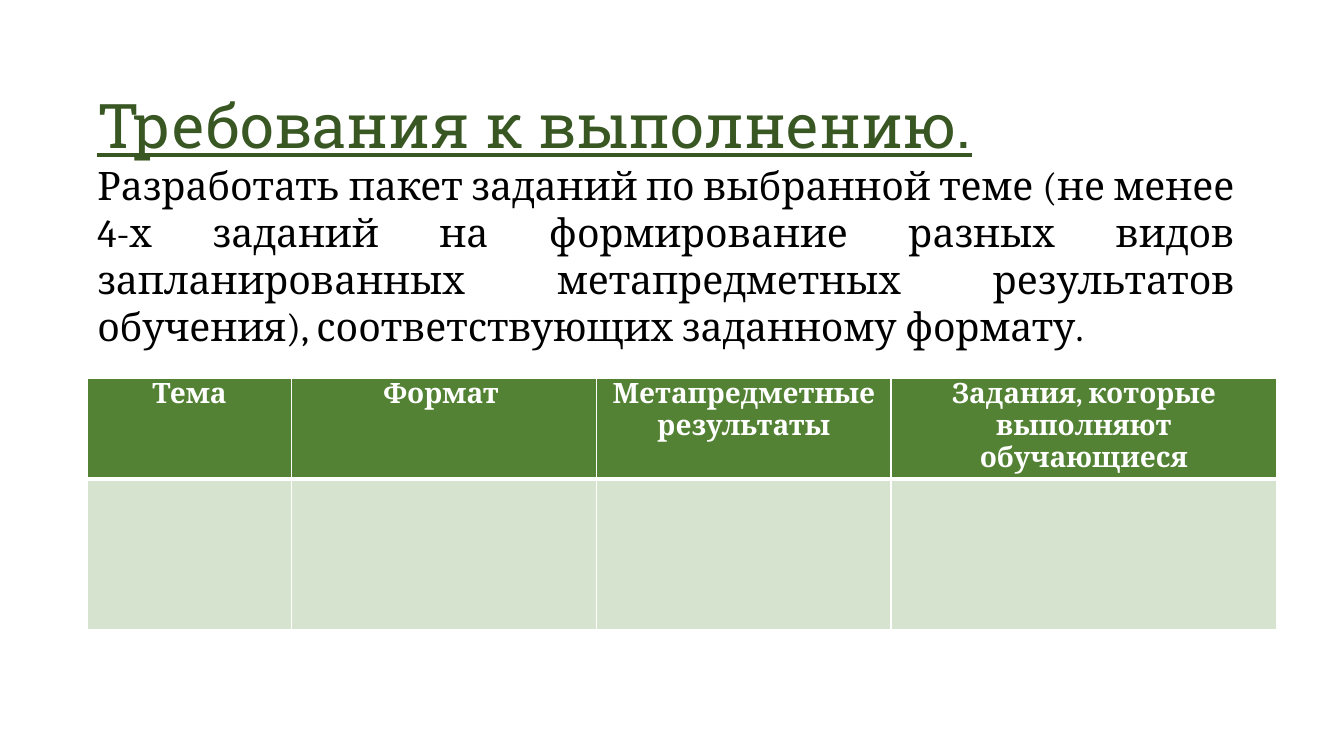
from dataclasses import dataclass

from lxml import etree
from pptx import Presentation
from pptx import util as u
from pptx.dml.color import RGBColor
from pptx.enum import text
from pptx.oxml import ns

SLIDE_WIDTH, SLIDE_HEIGHT = u.Inches(13.33), u.Inches(7.5)
LEFT = 0.065  # shared left edge, share of the slide's width

DARK_GREEN = RGBColor(0x38, 0x57, 0x23)
HEADER_GREEN = RGBColor(0x54, 0x82, 0x35)
PALE_GREEN = RGBColor(0xD5, 0xE3, 0xCF)
BLACK = RGBColor(0, 0, 0)
WHITE = RGBColor(0xFF, 0xFF, 0xFF)


@dataclass(frozen=True)
class Column:
    heading: str
    share: float  # of the slide's width


@dataclass(frozen=True)
class Row:
    share: float  # of the slide's height
    fill: RGBColor
    bottom_border: float  # points


COLUMNS = [
    Column("Тема", 0.152),
    Column("Формат ", 0.227),
    Column("Метапредметные результаты", 0.219),
    Column("Задания, которые выполняют обучающиеся", 0.287),
]
ROWS = [Row(0.125, HEADER_GREEN, 3), Row(0.199, PALE_GREEN, 1)]


def across(share: float) -> int:
    return round(SLIDE_WIDTH * share)


def down(share: float) -> int:
    return round(SLIDE_HEIGHT * share)


def write(paragraph, content: str, *, size: float, color: RGBColor,
          font: str = "Cambria", align=text.PP_ALIGN.JUSTIFY,
          bold: bool = False, underline: bool = False,
          spacing: float | None = None) -> None:
    paragraph.alignment = align
    paragraph.line_spacing = spacing
    run = paragraph.add_run()
    run.text = content
    run.font.name, run.font.size = font, u.Pt(size)
    run.font.color.rgb = color
    run.font.bold, run.font.underline = bold, underline


def add_border(cell, side: str, width: float) -> None:
    properties = cell._tc.get_or_add_tcPr()
    line = etree.SubElement(properties, ns.qn(f"a:ln{side}"), w=str(u.Pt(width)))
    fill = etree.SubElement(line, ns.qn("a:solidFill"))
    etree.SubElement(fill, ns.qn("a:srgbClr"), val=str(WHITE))


def format_cell(cell, row: Row) -> None:
    cell.margin_left = cell.margin_right = u.Inches(0.07)
    cell.margin_top = cell.margin_bottom = 0
    for side in "LRT":
        add_border(cell, side, 1)
    add_border(cell, "B", row.bottom_border)
    cell.fill.solid()
    cell.fill.fore_color.rgb = row.fill


def add_requirements(slide) -> None:
    box = slide.shapes.add_textbox(across(LEFT), down(0.06), across(0.861), down(0.413))
    frame = box.text_frame
    frame.word_wrap = True
    frame.auto_size = text.MSO_AUTO_SIZE.SHAPE_TO_FIT_TEXT
    write(frame.paragraphs[0], "Требования к выполнению.", size=44, color=DARK_GREEN,
          font="Roboto Slab", underline=True, spacing=1.5)
    write(frame.add_paragraph(),
          "Разработать пакет заданий по выбранной теме (не менее 4-х заданий "
          "на формирование разных видов запланированных метапредметных результатов "
          "обучения), соответствующих заданному формату. ", size=28, color=BLACK)


def add_task_table(slide) -> None:
    table = slide.shapes.add_table(
        len(ROWS), len(COLUMNS), across(LEFT), down(0.5),
        across(sum(column.share for column in COLUMNS)),
        down(sum(row.share for row in ROWS))).table
    for index, column in enumerate(COLUMNS):
        table.columns[index].width = across(column.share)
        write(table.cell(0, index).text_frame.paragraphs[0], column.heading,
              size=20, color=WHITE, align=text.PP_ALIGN.CENTER, bold=True)
    for table_row, row in zip(table.rows, ROWS):
        table_row.height = down(row.share)
        for cell in table_row.cells:
            format_cell(cell, row)


def main() -> None:
    presentation = Presentation()
    presentation.slide_width, presentation.slide_height = SLIDE_WIDTH, SLIDE_HEIGHT
    slide = presentation.slides.add_slide(presentation.slide_layouts[6])
    # Heading and assignment
    add_requirements(slide)
    # Table to fill in
    add_task_table(slide)
    presentation.save("out.pptx")


if __name__ == "__main__":
    main()
